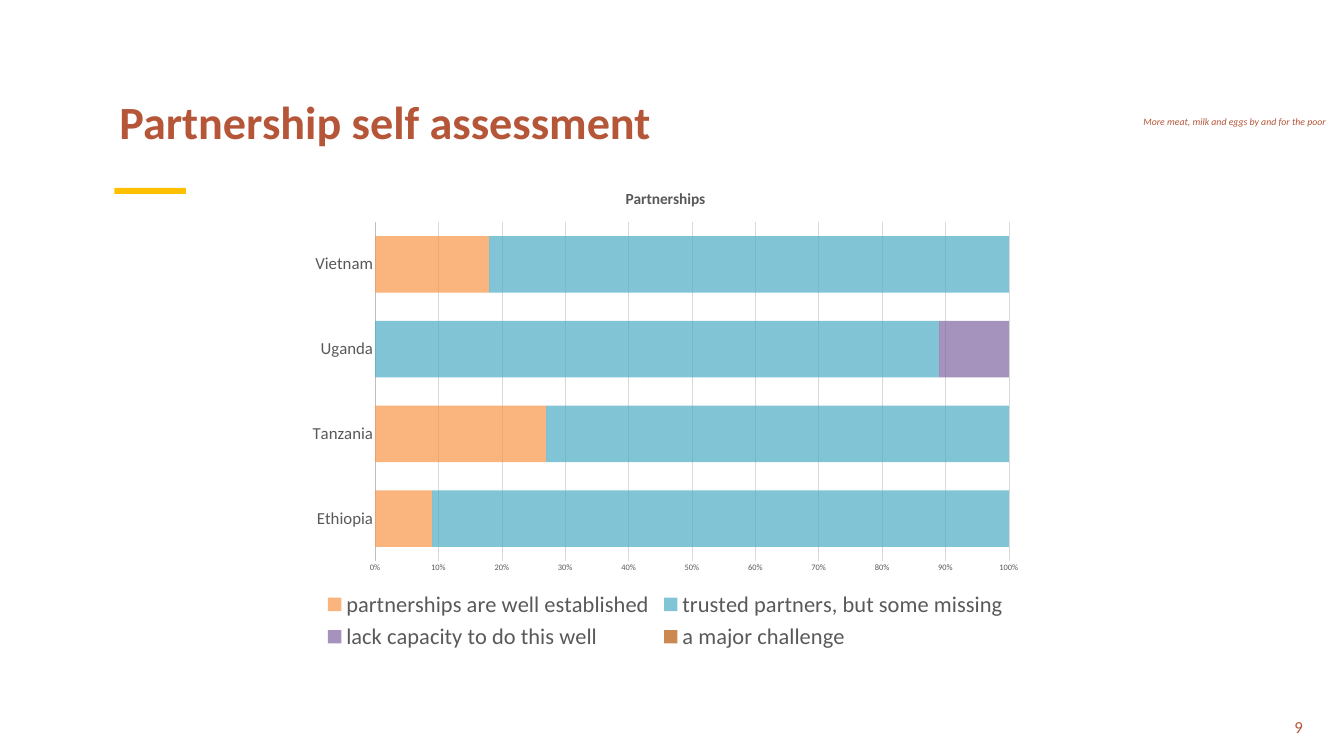
import pptx
import pptx.chart.data
import pptx.dml.color
import pptx.enum.chart
import pptx.enum.shapes
import pptx.enum.text
import pptx.oxml
import pptx.oxml.ns
import pptx.util
from pptx.util import Cm

FONT = "Calibri"
COLOURS = {
    "background": "FFFFFF", "rust": "B55638", "accent": "FFC000",
    "label": "595959", "axis": "BFBFBF", "grid": "D9D9D9",
}
COUNTRIES = ["Ethiopia", "Tanzania", "Uganda", "Vietnam"]
RATINGS = [
    ("partnerships are well established", (9, 27, 0, 18), "F79646"),
    ("trusted partners, but some missing", (91, 73, 89, 82), "4BACC6"),
    ("lack capacity to do this well", (0, 0, 11, 0), "8064A2"),
    ("a major challenge", (0, 0, 0, 0), "B65708"),
]
PLOT_AREA = {"x": 0.105, "y": 0.103, "w": 0.862, "h": 0.702}


def rgb(value):
    """Turn a hex string into a colour."""
    return pptx.dml.color.RGBColor.from_string(value)


def style_font(font, size, colour, bold=False, italic=False):
    """Set the face, size, colour and weight of a font."""
    font.name = FONT
    font.size = pptx.util.Pt(size)
    font.bold = bold
    font.italic = italic
    font.color.rgb = rgb(COLOURS[colour])


def add_text(slide, box, text, size, bold=False, italic=False, align="LEFT", wrap=True):
    """Add one rust-coloured line of text."""
    frame = slide.shapes.add_textbox(*map(Cm, box)).text_frame
    frame.word_wrap = wrap
    line = frame.paragraphs[0]
    line.text = text
    line.alignment = getattr(pptx.enum.text.PP_ALIGN, align)
    style_font(line.font, size, "rust", bold, italic)


def add_bar(slide, box):
    """Add the accent bar below the heading."""
    bar = slide.shapes.add_shape(pptx.enum.shapes.MSO_SHAPE.RECTANGLE, *map(Cm, box))
    bar.shadow.inherit = False
    bar.fill.solid()
    bar.fill.fore_color.rgb = rgb(COLOURS["accent"])
    bar.line.fill.background()


def place_plot(chart):
    """Fix the inner plot area as fractions of the chart."""
    plot_area = chart._chartSpace.chart.plotArea
    for old in plot_area.findall(pptx.oxml.ns.qn("c:layout")):
        plot_area.remove(old)
    modes = '<c:layoutTarget val="inner"/><c:xMode val="edge"/><c:yMode val="edge"/>'
    sizes = "".join(f'<c:{key} val="{value}"/>' for key, value in PLOT_AREA.items())
    plot_area.insert(0, pptx.oxml.parse_xml(
        f'<c:layout {pptx.oxml.ns.nsdecls("c")}>'
        f"<c:manualLayout>{modes}{sizes}</c:manualLayout></c:layout>"))


def fill_series(series, colour, opacity):
    """Give a series a partly transparent fill."""
    series.format.fill.solid()
    series.format.fill.fore_color.rgb = rgb(colour)
    shade = series._element.find(".//" + pptx.oxml.ns.qn("a:srgbClr"))
    shade.append(pptx.oxml.parse_xml(
        f'<a:alpha {pptx.oxml.ns.nsdecls("a")} val="{opacity * 1000}"/>'))


def style_axis(axis, size):
    """Remove the ticks of an axis and set its labels."""
    axis.major_tick_mark = pptx.enum.chart.XL_TICK_MARK.NONE
    axis.minor_tick_mark = pptx.enum.chart.XL_TICK_MARK.NONE
    style_font(axis.tick_labels.font, size, "label")


def style_line(line, colour):
    """Draw a thin chart line."""
    line.color.rgb = rgb(COLOURS[colour])
    line.width = pptx.util.Pt(0.75)


def add_partnership_chart(slide, box):
    """Add the stacked bars of partnership ratings by country."""
    ratings = pptx.chart.data.CategoryChartData()
    ratings.categories = COUNTRIES
    for name, values, _ in RATINGS:
        ratings.add_series(name, values)
    chart = slide.shapes.add_chart(
        pptx.enum.chart.XL_CHART_TYPE.BAR_STACKED_100, *map(Cm, box), ratings).chart
    chart.font.name = FONT
    chart.font.size = pptx.util.Pt(10)

    chart.has_title = True
    heading = chart.chart_title.text_frame
    heading.text = "Partnerships"
    style_font(heading.paragraphs[0].font, 22, "label", bold=True)
    chart.chart_title.include_in_layout = False

    chart.has_legend = True
    chart.legend.position = pptx.enum.chart.XL_LEGEND_POSITION.BOTTOM
    chart.legend.include_in_layout = False
    style_font(chart.legend.font, 32, "label")

    bars = chart.plots[0]
    bars.gap_width = 50
    bars.overlap = 100
    bars.vary_by_categories = False
    for series, (_, _, colour) in zip(bars.series, RATINGS):
        fill_series(series, colour, 70)

    style_axis(chart.category_axis, 24)
    style_line(chart.category_axis.format.line, "axis")
    share_axis = chart.value_axis
    style_axis(share_axis, 12)
    share_axis.format.line.fill.background()
    share_axis.major_unit = 0.1
    share_axis.tick_labels.number_format = "0%"
    share_axis.tick_labels.number_format_is_linked = False
    style_line(share_axis.major_gridlines.format.line, "grid")
    place_plot(chart)


def main():
    """Build and save the partnership slide."""
    deck = pptx.Presentation()
    deck.slide_width, deck.slide_height = Cm(67.74), Cm(38.1)
    slide = deck.slides.add_slide(deck.slide_layouts[6])
    slide.background.fill.solid()
    slide.background.fill.fore_color.rgb = rgb(COLOURS["background"])

    add_text(slide, (64.14, 35.97, 1.78, 1.27), "9", 24, align="RIGHT")
    add_bar(slide, (5.77, 9.47, 3.6, 0.3))
    add_text(slide, (57.38, 5.72, 9.78, 0.86),
             "More meat, milk and eggs by and for the poor", 14, italic=True, wrap=False)
    add_text(slide, (5.77, 4.6, 45.67, 4.88), "Partnership self assessment", 66, bold=True)
    add_partnership_chart(slide, (15.01, 8.69, 37.06, 24.33))
    deck.save("out.pptx")


if __name__ == "__main__":
    main()
